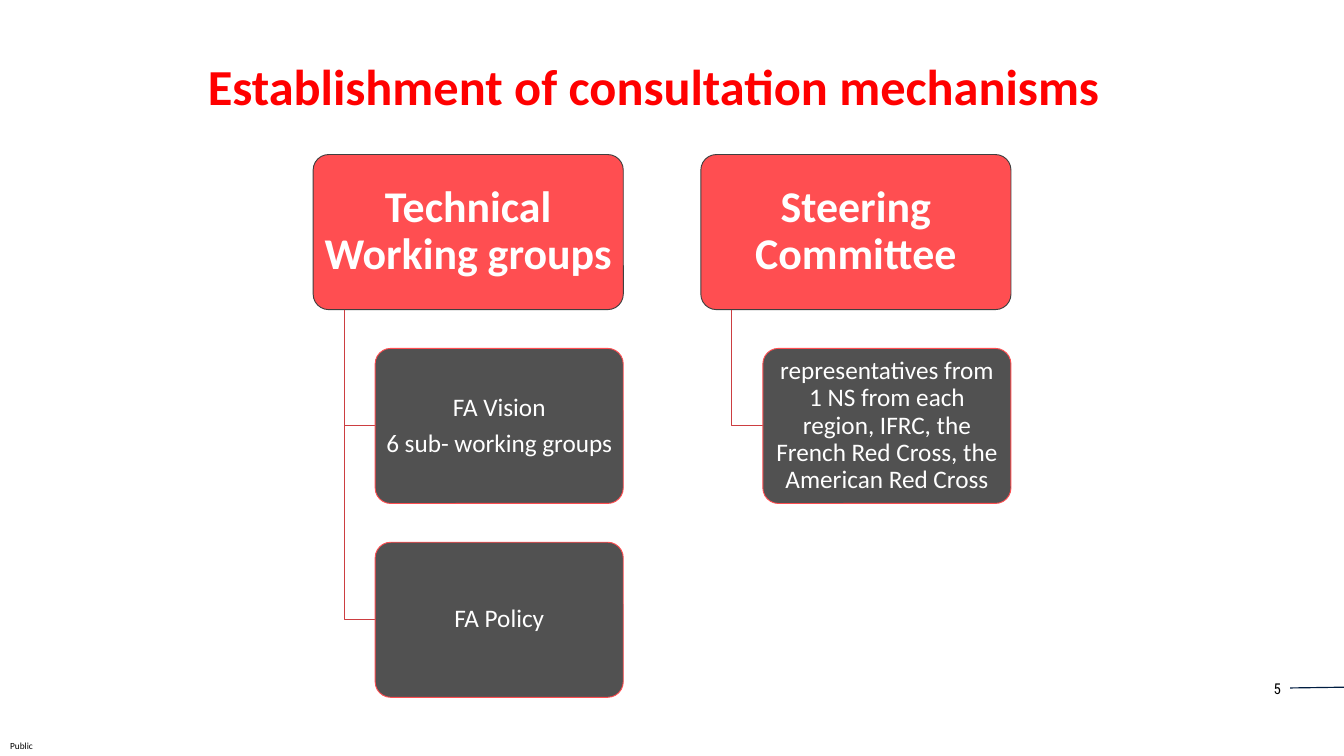
from dataclasses import dataclass

from lxml import etree
from pptx import Presentation
from pptx.dml.color import RGBColor
from pptx.enum.shapes import MSO_CONNECTOR, MSO_SHAPE
from pptx.enum.text import MSO_ANCHOR, MSO_AUTO_SIZE, PP_ALIGN
from pptx.oxml.ns import qn
from pptx.util import Inches, Pt

CENTER, RIGHT = PP_ALIGN.CENTER, PP_ALIGN.RIGHT
TOP, MIDDLE = MSO_ANCHOR.TOP, MSO_ANCHOR.MIDDLE
NO_AUTOFIT = MSO_AUTO_SIZE.NONE
ROUNDED, STRAIGHT = MSO_SHAPE.ROUNDED_RECTANGLE, MSO_CONNECTOR.STRAIGHT

WIDTH, HEIGHT = 20, 11.25

# Chart grid, in units: boxes are 4 rows high with 1 row between them
UNIT = HEIGHT / 19.5
LEFT_EDGE, TOP_EDGE = 4.66, 2.3
BOX_COLUMNS, BOX_ROWS = 8, 4
COLUMN_STEP, ROW_STEP = 10, 5
TRUNK, INDENT = 0.1 * BOX_COLUMNS, 0.2 * BOX_COLUMNS

BRANCHES = [
    ("Technical Working groups", [["FA Vision", "6 sub- working groups"], ["FA Policy"]]),
    ("Steering Committee", [["representatives from 1 NS from each region, IFRC, "
                             "the French Red Cross, the American Red Cross"]]),
]


@dataclass(frozen=True)
class Theme:
    font: str = "Calibri"
    number_font: str = "Roboto Condensed"
    title: str = "FF0000"
    head: str = "FF4E51"
    body: str = "3F3F3F"
    branch: str = "CC3E41"
    rule: str = "001D41"
    dark: str = "000000"
    light: str = "FFFFFF"
    title_size: int = 54
    head_size: int = 47
    body_size: int = 27
    number_size: int = 16
    label_size: int = 10


def write(frame, paragraphs, *, size, color, font, bold=False, align=CENTER, anchor=MIDDLE,
          margins=(0.1, 0.05), wrap=True, line_spacing=None, space_after=None):
    """Fill a text frame with paragraphs that share one format."""
    frame.auto_size = NO_AUTOFIT
    frame.word_wrap = wrap
    frame.vertical_anchor = anchor
    frame.margin_left = frame.margin_right = Inches(margins[0])
    frame.margin_top = frame.margin_bottom = Inches(margins[1])
    for index, text in enumerate(paragraphs):
        paragraph = frame.add_paragraph() if index else frame.paragraphs[0]
        paragraph.alignment = align
        paragraph.line_spacing = line_spacing
        paragraph.space_after = space_after
        run = paragraph.add_run()
        run.text = text
        run.font.name, run.font.size, run.font.bold = font, Pt(size), bold
        run.font.color.rgb = RGBColor.from_string(color)


def grid(column, row):
    """Turn a grid position into a point on the slide."""
    return Inches(LEFT_EDGE + column * UNIT), Inches(TOP_EDGE + row * UNIT)


class SlideBuilder:
    def __init__(self, slide, theme):
        self.slide, self.theme = slide, theme

    def outline(self, shape, color, width=1):
        shape.line.color.rgb = RGBColor.from_string(color)
        shape.line.width = Pt(width)

    def title(self, text, left, top, width, height):
        shape = self.slide.shapes.title
        shape.left, shape.top = Inches(left * WIDTH), Inches(top * HEIGHT)
        shape.width, shape.height = Inches(width * WIDTH), Inches(height * HEIGHT)
        write(shape.text_frame, [text], size=self.theme.title_size, color=self.theme.title,
              font=self.theme.font, bold=True)

    def label(self, text, left, top, width, height, **text_format):
        shape = self.slide.shapes.add_textbox(
            Inches(left * WIDTH), Inches(top * HEIGHT),
            Inches(width * WIDTH), Inches(height * HEIGHT))
        write(shape.text_frame, [text], color=self.theme.dark, wrap=False, **text_format)

    def rule(self, left, top, right, bottom):
        connector = self.slide.shapes.add_connector(
            STRAIGHT, Inches(left * WIDTH), Inches(top * HEIGHT),
            Inches(right * WIDTH), Inches(bottom * HEIGHT))
        self.outline(connector, self.theme.rule, 1.25)
        etree.SubElement(connector.line._get_or_add_ln().getparent(), qn("a:effectLst"))

    def box(self, column, row, columns, paragraphs, fill, line, size, **text_format):
        shape = self.slide.shapes.add_shape(
            ROUNDED, *grid(column, row), Inches(columns * UNIT), Inches(BOX_ROWS * UNIT))
        shape.adjustments[0] = 0.1
        shape.shadow.inherit = False
        shape.fill.solid()
        shape.fill.fore_color.rgb = RGBColor.from_string(fill)
        self.outline(shape, line)
        write(shape.text_frame, paragraphs, size=size, color=self.theme.light,
              font=self.theme.font, line_spacing=0.9, space_after=Pt(0.35 * size),
              **text_format)
        return shape

    def head(self, column, text):
        self.box(column, 0, BOX_COLUMNS, [text], self.theme.head, self.theme.body,
                 self.theme.head_size, bold=True, margins=(0.09, 0.07))

    def child(self, column, row, paragraphs):
        shape = self.box(column + INDENT, row, BOX_COLUMNS - INDENT, paragraphs,
                         self.theme.body, self.theme.head, self.theme.body_size,
                         margins=(0.06, 0.04))
        color = shape.fill._xPr.find(qn("a:solidFill"))[0]
        etree.SubElement(color, qn("a:alpha"), val="90000")

    def elbow(self, column, row):
        """Join the foot of a head box to the middle of a child box."""
        middle = row + BOX_ROWS / 2
        builder = self.slide.shapes.build_freeform(*grid(column + TRUNK, BOX_ROWS))
        builder.add_line_segments(
            [grid(column + TRUNK, middle), grid(column + INDENT, middle)], close=False)
        shape = builder.convert_to_shape()
        shape.shadow.inherit = False
        shape.fill.background()
        self.outline(shape, self.theme.branch)


def main():
    presentation = Presentation()
    presentation.slide_width, presentation.slide_height = Inches(WIDTH), Inches(HEIGHT)
    theme = Theme()
    builder = SlideBuilder(presentation.slides.add_slide(presentation.slide_layouts[5]), theme)

    # Footer: classification, page number and rule
    builder.label("Public", 0, 0.974, 0.032, 0.026, size=theme.label_size,
                  font=theme.font, margins=(0, 0))
    builder.label("5", 0.922, 0.894, 0.036, 0.033, size=theme.number_size,
                  font=theme.number_font, align=RIGHT, anchor=TOP)
    builder.rule(0.96, 0.91, 1, 0.909)

    # Title
    builder.title("Establishment of consultation mechanisms", 0.108, 0, 0.757, 0.226)

    # Hierarchy: one column for each branch
    for branch, (heading, children) in enumerate(BRANCHES):
        column = branch * COLUMN_STEP
        builder.head(column, heading)
        for level, paragraphs in enumerate(children, start=1):
            builder.elbow(column, level * ROW_STEP)
            builder.child(column, level * ROW_STEP, paragraphs)

    presentation.save("out.pptx")


if __name__ == "__main__":
    main()
